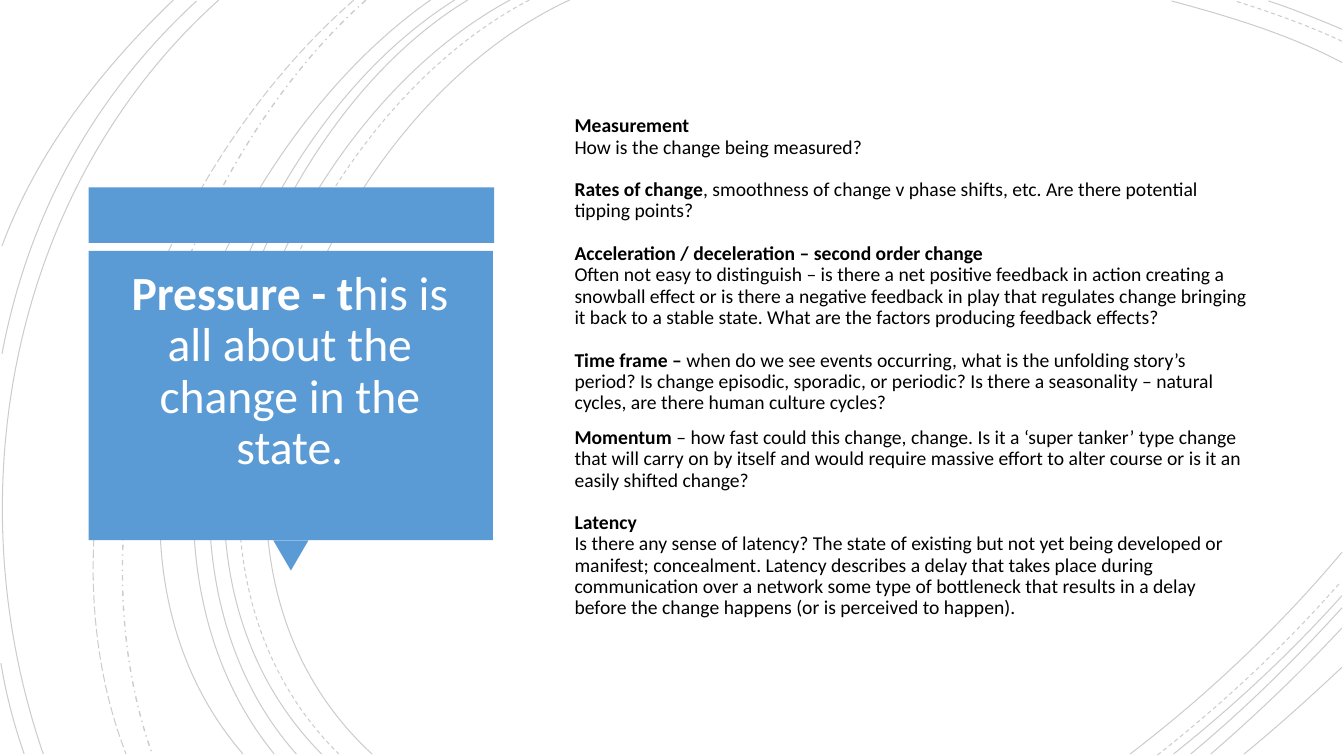
"""Build a slide on pressure: a blue callout, notes and thin arcs behind."""
import typing

import lxml.etree
import pptx
import pptx.dml.color
import pptx.enum.dml
import pptx.enum.shapes
import pptx.enum.text
import pptx.oxml.ns
import pptx.util

Inches = pptx.util.Inches
Pt = pptx.util.Pt
qn = pptx.oxml.ns.qn
Dash = pptx.enum.dml.MSO_LINE
Form = pptx.enum.shapes.MSO_SHAPE
Align = pptx.enum.text.PP_ALIGN

COLORS = {"blue": "5B9BD5", "ink": "000000", "white": "FFFFFF"}
FONT = "Calibri"
OPAQUE = "20000"
GAP = 15.4


class Arc(typing.NamedTuple):
    """A cubic curve: start, two control points and end, in inches."""
    points: tuple[tuple[float, float], ...]
    dash: Dash = Dash.SOLID
    weight: float = 0.75


class Block(typing.NamedTuple):
    """A filled shape of the callout."""
    form: Form
    left: float
    top: float
    width: float
    height: float
    turn: int = 0


class Para(typing.NamedTuple):
    """A paragraph with a bold lead, plain text and the space after it."""
    lead: str
    text: str
    after: float = 0


class Panel(typing.NamedTuple):
    """A text box whose insets centre its text."""
    left: float
    top: float
    width: float
    height: float
    inset: float
    base: float
    size: int
    color: str
    align: Align
    paras: tuple[Para, ...]


ARCS = (
    Arc(((5.65, 0), (3.15, 1.15), (1.43, 5.4), (3.69, 7.48))),
    Arc(((13.31, 0.62), (12.78, 0.34), (12.18, 0.16), (11.62, 0.01))),
    Arc(((11.21, 7.48), (11.97, 6.9), (12.69, 6.22), (13.31, 5.48))),
    Arc(((5.25, 0), (2.85, 1.25), (1.23, 5.37), (3.36, 7.48)), Dash.DASH),
    Arc(((13.31, 0.41), (12.97, 0.25), (12.6, 0.12), (12.25, 0.01)), Dash.DASH),
    Arc(((11.48, 7.49), (12.13, 6.98), (12.75, 6.4), (13.3, 5.77)), Dash.DASH),
    Arc(((5.06, 0), (2.7, 1.27), (1.1, 5.37), (3.19, 7.48))),
    Arc(((13.31, 0.29), (13.07, 0.19), (12.83, 0.09), (12.58, 0.01))),
    Arc(((11.64, 7.48), (12.23, 7.01), (12.8, 6.48), (13.31, 5.91))),
    Arc(((4.64, 0), (2.44, 1.33), (1.1, 5.41), (2.94, 7.48))),
    Arc(((11.81, 7.48), (12.34, 7.04), (12.84, 6.55), (13.31, 6.03))),
    Arc(((4.51, 0), (2.31, 1.38), (0.97, 5.33), (2.72, 7.48))),
    Arc(((12.01, 7.48), (12.46, 7.09), (12.9, 6.67), (13.31, 6.23))),
    Arc(((4.27, 0), (2.17, 1.47), (0.53, 5.29), (2.41, 7.48))),
    Arc(((12.34, 7.48), (12.67, 7.21), (12.99, 6.92), (13.31, 6.62))),
    Arc(((3.63, 0), (1.76, 1.66), (0.65, 5.09), (1.51, 7.48)), Dash.DASH_DOT, 1),
    Arc(((3.51, 0), (1.57, 1.69), (0.29, 4.99), (1.25, 7.48)), Dash.LONG_DASH),
    Arc(((2.17, 0), (0.11, 1.85), (-0.46, 4.9), (0.43, 7.48))),
    Arc(((1.95, 0.01), (0.92, 0.96), (0.28, 2.14), (0.02, 3.51))),
    Arc(((0.01, 6.58), (0.06, 6.89), (0.14, 7.19), (0.24, 7.48))),
    Arc(((1.72, 0), (1, 0.69), (0.37, 1.5), (0.02, 2.44))),
)

BLOCKS = (
    Block(Form.RECTANGLE, 0.88, 1.86, 4.02, 0.55),
    Block(Form.ISOSCELES_TRIANGLE, 2.71, 5.36, 0.35, 0.3, 180),
    Block(Form.RECTANGLE, 0.88, 2.49, 4.01, 2.87),
)

TITLE = (Para("Pressure - t", "his is all about the change in the state."),)

NOTES = (
    Para("Measurement", ""),
    Para("", "How is the change being measured?", GAP),
    Para("Rates of change", ", smoothness of change v phase shifts, etc. "
         "Are there potential tipping points?", GAP),
    Para("Acceleration / deceleration – second order change", ""),
    Para("", "Often not easy to distinguish – is there a net positive feedback "
         "in action creating a snowball effect or is there a negative feedback "
         "in play that regulates change bringing it back to a stable state. "
         "What are the factors producing feedback effects?", GAP),
    Para("Time frame – ", "when do we see events occurring, what is the "
         "unfolding story’s period? Is change episodic, sporadic, or periodic? "
         "Is there a seasonality – natural cycles, are there human culture "
         "cycles?", 10),
    Para("Momentum", " – how fast could this change, change. Is it a ‘super "
         "tanker’ type change that will carry on by itself and would require "
         "massive effort to alter course or is it an easily shifted change?",
         GAP),
    Para("Latency", ""),
    Para("", "Is there any sense of latency? The state of existing but not yet "
         "being developed or manifest; concealment. Latency describes a delay "
         "that takes place during communication over a network some type of "
         "bottleneck that results in a delay before the change happens (or is "
         "perceived to happen)."),
)

PANELS = (
    Panel(0.99, 2.64, 3.77, 2.62, 0, 0.52, 34, "white", Align.CENTER, TITLE),
    Panel(5.6, 0.88, 6.87, 5.74, 0.05, 0.26, 14, "ink", Align.LEFT, NOTES),
)


def color(name: str) -> pptx.dml.color.RGBColor:
    """Return a named colour."""
    return pptx.dml.color.RGBColor.from_string(COLORS[name])


def draw_arc(shapes, arc: Arc) -> None:
    """Draw one faint curve."""
    start, *rest = [(Inches(x), Inches(y)) for x, y in arc.points]
    pen = shapes.build_freeform(*start)
    pen.add_line_segments(rest, close=False)
    shape = pen.convert_to_shape()
    shape.shadow.inherit = False
    shape.fill.background()
    shape.line.color.rgb = color("ink")
    shape.line.width = Pt(arc.weight)
    shape.line.dash_style = arc.dash
    tint = next(shape.line._ln.iter(qn("a:srgbClr")))
    lxml.etree.SubElement(tint, qn("a:alpha"), val=OPAQUE)
    steps = list(shape._element.iter(qn("a:lnTo")))
    curve = lxml.etree.SubElement(steps[0].getparent(), qn("a:cubicBezTo"))
    for step in steps:
        curve.append(step[0])
        step.getparent().remove(step)


def draw_block(shapes, block: Block) -> None:
    """Draw one filled part of the callout."""
    shape = shapes.add_shape(block.form, Inches(block.left), Inches(block.top),
                             Inches(block.width), Inches(block.height))
    shape.rotation = block.turn
    shape.shadow.inherit = False
    shape.fill.solid()
    shape.fill.fore_color.rgb = color("blue")
    shape.line.fill.background()


def draw_panel(shapes, panel: Panel) -> None:
    """Draw one text box, run by run."""
    box = shapes.add_textbox(Inches(panel.left), Inches(panel.top),
                             Inches(panel.width), Inches(panel.height))
    frame = box.text_frame
    frame.word_wrap = True
    frame.vertical_anchor = pptx.enum.text.MSO_ANCHOR.MIDDLE
    frame.margin_top = Inches(panel.inset)
    frame.margin_bottom = Inches(panel.base)
    for index, para in enumerate(panel.paras):
        line = frame.add_paragraph() if index else frame.paragraphs[0]
        line.alignment = panel.align
        line.line_spacing = 0.9
        line.space_after = Pt(para.after)
        for text, bold in ((para.lead, True), (para.text, False)):
            if text:
                run = line.add_run()
                run.text = text
                run.font.name = FONT
                run.font.size = Pt(panel.size)
                run.font.bold = bold
                run.font.color.rgb = color(panel.color)


def main() -> None:
    """Build and save the deck."""
    deck = pptx.Presentation()
    deck.slide_width = Inches(13.33)
    deck.slide_height = Inches(7.5)
    shapes = deck.slides.add_slide(deck.slide_layouts[6]).shapes
    for arc in ARCS:
        draw_arc(shapes, arc)
    for block in BLOCKS:
        draw_block(shapes, block)
    for panel in PANELS:
        draw_panel(shapes, panel)
    deck.save("out.pptx")


if __name__ == "__main__":
    main()
